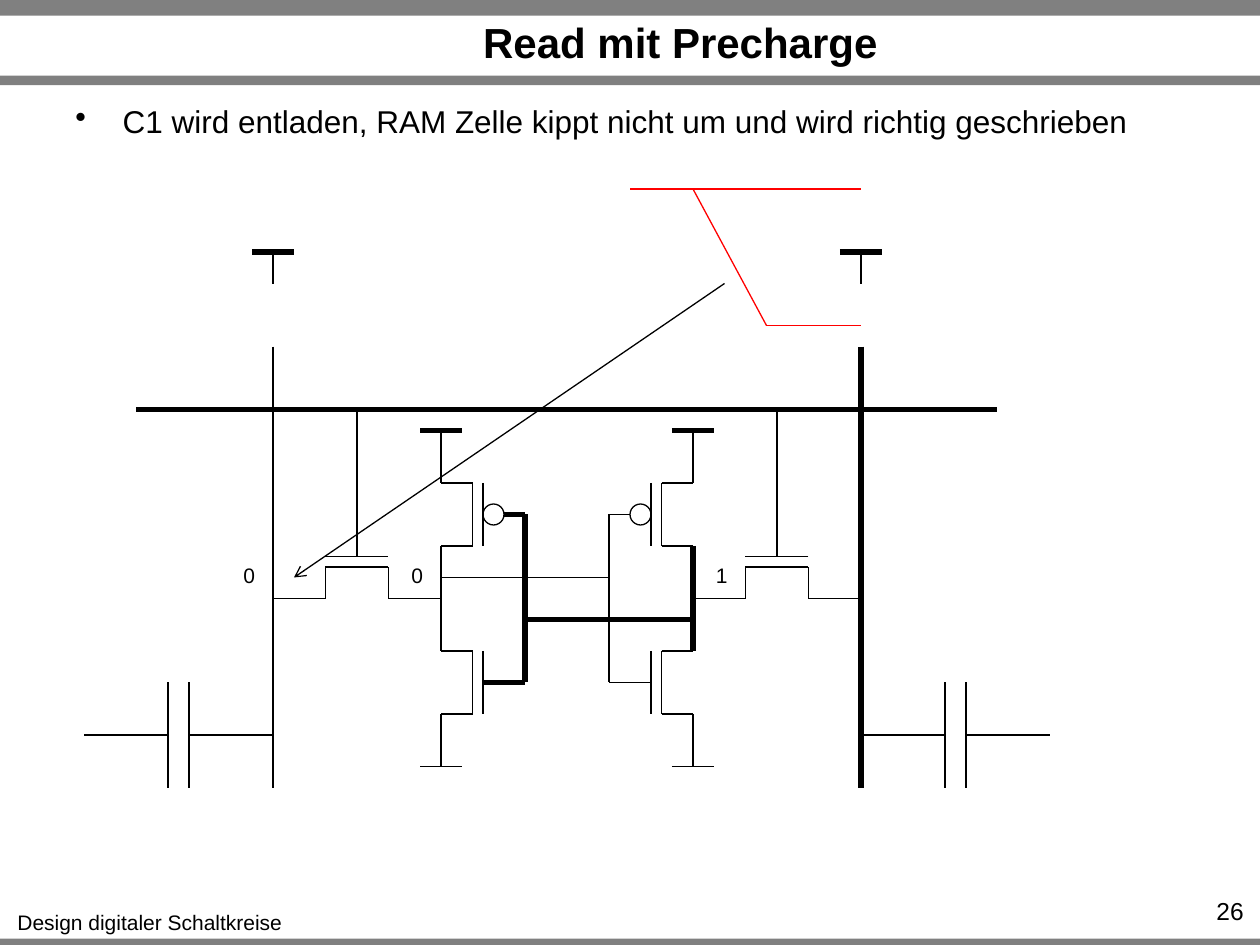
"""Draw a slide of a RAM cell read with precharge."""
from typing import NamedTuple

from lxml import etree
from pptx import Presentation
from pptx.dml.color import RGBColor
from pptx.enum.shapes import MSO_CONNECTOR, MSO_SHAPE
from pptx.enum.text import MSO_ANCHOR, PP_ALIGN
from pptx.oxml.ns import qn
from pptx.util import Pt

LINE = MSO_CONNECTOR.STRAIGHT
RECT = MSO_SHAPE.RECTANGLE
OVAL = MSO_SHAPE.OVAL
TOP = MSO_ANCHOR.TOP
MIDDLE = MSO_ANCHOR.MIDDLE
LEFT = PP_ALIGN.LEFT
CENTER = PP_ALIGN.CENTER
RIGHT = PP_ALIGN.RIGHT

BLACK = RGBColor(0, 0, 0)
GRAY = RGBColor(0x80, 0x80, 0x80)
RED = RGBColor(0xFF, 0, 0)

FONT = "Arial"
THIN = 0.75
THICK = 3
AXIS = 324
INDENT = 27


class Wire(NamedTuple):
    x1: float
    y1: float
    x2: float
    y2: float
    width: float = THIN
    color: RGBColor = BLACK


class Box(NamedTuple):
    x: float
    y: float
    w: float
    h: float


BARS = [Box(0, 536.4, 720, 5.4), Box(0, 0, 720, 9), Box(0, 43.2, 720, 5.4)]

# x in HALF is the distance from the axis of the cell
HALF = [
    Wire(72, 342, 72, 372), Wire(72, 312, 72, 342),
    Wire(72, 246, 72, 276), Wire(72, 408, 72, 438),
    Wire(60, 438, 84, 438), Wire(60, 246, 84, 246, THICK),
    Wire(48, 390, 24, 390), Wire(36, 294, 24, 294),
    Wire(24, 294, 24, 390), Wire(72, 342, 102, 342),
    Wire(138, 324, 102, 324), Wire(138, 324, 138, 342),
    Wire(102, 324, 102, 342), Wire(138, 318, 102, 318),
    Wire(168, 342, 138, 342), Wire(120, 318, 120, 234),
    Wire(168, 420, 216, 420), Wire(216, 390, 216, 450),
    Wire(228, 390, 228, 450), Wire(228, 420, 276, 420),
    Wire(168, 162, 168, 144), Wire(156, 144, 180, 144, THICK),
]
GATES = [276, 372]

NETS = [
    Wire(492, 198, 492, 450, THICK), Wire(78, 234, 570, 234, THICK),
    Wire(396, 342, 396, 372, THICK), Wire(396, 312, 396, 342, THICK),
    Wire(276, 390, 300, 390, THICK), Wire(288, 294, 300, 294, THICK),
    Wire(300, 294, 300, 390, THICK), Wire(300, 354, 396, 354, THICK),
    Wire(156, 198, 156, 450), Wire(252, 330, 348, 330),
    Wire(360, 108, 492, 108, THIN, RED),
    Wire(396, 108, 438, 186, THIN, RED),
    Wire(438, 186, 492, 186, THIN, RED),
]
ARROW = Wire(414, 162, 168, 330)
BITS = [("0", 132), ("0", 228), ("1", 402)]


def add_wire(slide, wire: Wire, head: bool = False) -> None:
    ends = [Pt(n) for n in wire[:4]]
    link = slide.shapes.add_connector(LINE, *ends)
    link.line.width = Pt(wire.width)
    link.line.color.rgb = wire.color
    props = link.element.spPr
    etree.SubElement(props, qn("a:effectLst"))
    if head:
        tail = etree.SubElement(props.find(qn("a:ln")), qn("a:tailEnd"))
        tail.set("type", "arrow")


def add_form(slide, kind, box: Box):
    form = slide.shapes.add_shape(kind, *[Pt(n) for n in box])
    form.shadow.inherit = False
    return form


def add_bar(slide, box: Box) -> None:
    bar = add_form(slide, RECT, box)
    bar.fill.solid()
    bar.fill.fore_color.rgb = GRAY
    bar.line.fill.background()


def add_ring(slide, box: Box) -> None:
    ring = add_form(slide, OVAL, box)
    ring.fill.background()
    ring.line.color.rgb = BLACK
    ring.line.width = Pt(THIN)


def add_text(slide, text: str, box: Box, *, size: float, align=CENTER,
             bold: bool = False, wrap: bool = True, anchor=TOP,
             bullet: str = "") -> None:
    frame = slide.shapes.add_textbox(*[Pt(n) for n in box]).text_frame
    frame.word_wrap = wrap
    frame.vertical_anchor = anchor
    para = frame.paragraphs[0]
    para.alignment = align
    if bullet:
        props = para._p.get_or_add_pPr()
        props.set("marL", str(Pt(INDENT)))
        props.set("indent", str(-Pt(INDENT)))
        etree.SubElement(props, qn("a:buChar")).set("char", bullet)
    run = para.add_run()
    run.text = text
    run.font.name = FONT
    run.font.size = Pt(size)
    run.font.bold = bold
    run.font.color.rgb = BLACK


def add_half(slide, side: int) -> None:
    wires = list(HALF)
    for top in GATES:
        low = top + 36
        wires += [
            Wire(54, top, 54, low), Wire(48, top, 48, low),
            Wire(54, top, 72, top), Wire(54, low, 72, low),
        ]
    for wire in wires:
        add_wire(slide, wire._replace(x1=AXIS + side * wire.x1,
                                      x2=AXIS + side * wire.x2))
    add_ring(slide, Box(AXIS + side * 42 - 6, 288, 12, 12))


def main() -> None:
    deck = Presentation()
    deck.slide_width, deck.slide_height = Pt(720), Pt(540)
    slide = deck.slides.add_slide(deck.slide_layouts[6])
    for bar in BARS:
        add_bar(slide, bar)
    add_text(slide, "Design digitaler Schaltkreise",
             Box(2.16, 516.24, 167, 21.6), size=12, wrap=False)
    add_text(slide, "Read mit Precharge", Box(93.6, 10.1, 590.4, 27.4),
             size=24, bold=True, anchor=MIDDLE)
    add_text(slide, "C1 wird entladen, RAM Zelle kippt nicht um "
             "und wird richtig geschrieben", Box(36, 54.7, 648, 47.5),
             size=18, align=LEFT, bullet="•")
    add_text(slide, "26", Box(655.2, 508.3, 62.6, 17.3), size=14, align=RIGHT)
    for net in NETS:
        add_wire(slide, net)
    for side in (1, -1):
        add_half(slide, side)
    for bit, left in BITS:
        add_text(slide, bit, Box(left, 318, 20.9, 21.6), size=12, wrap=False)
    add_wire(slide, ARROW, head=True)
    deck.save("out.pptx")


if __name__ == "__main__":
    main()
